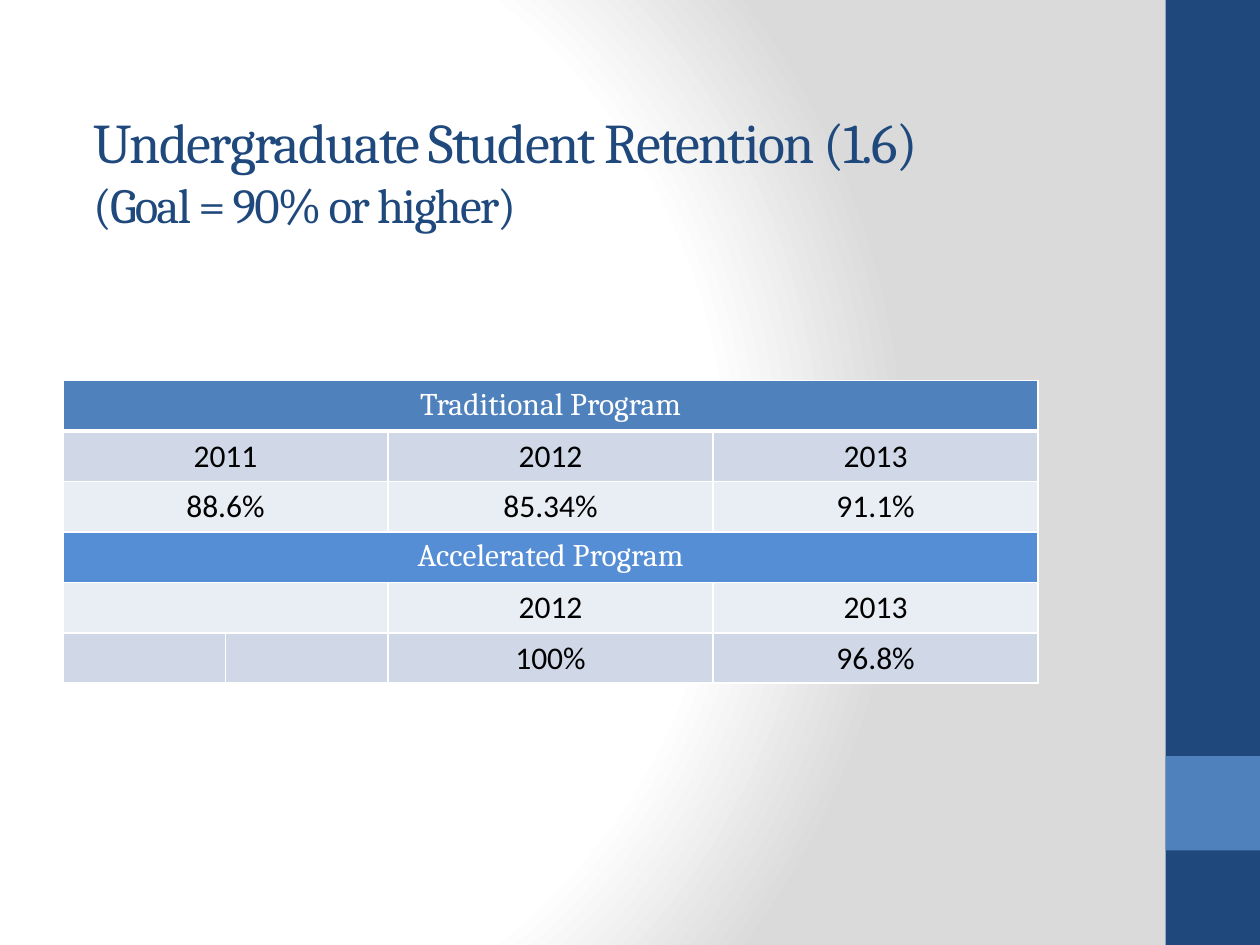
from lxml import etree
from pptx import Presentation
from pptx.dml.color import RGBColor
from pptx.enum.shapes import MSO_SHAPE as Shape
from pptx.enum.text import MSO_ANCHOR as Anchor, PP_ALIGN as Align
from pptx.oxml import parse_xml
from pptx.oxml.ns import nsdecls, qn
from pptx.util import Inches, Pt

COLORS = {
    "white": "FFFFFF",
    "black": "000000",
    "gray": "DADADA",
    "navy": "1F497D",
    "blue": "4F81BD",
    "bright": "558ED5",
    "band": "D0D8E8",
    "pale": "E9EDF4",
}
COLUMN_WIDTHS = [1.29, 1.29, 2.58, 2.58]
ROW_HEIGHT = 0.4
ROWS = [
    ("blue", ["Traditional Program"]),
    ("band", ["2011", "", "2012", "2013"]),
    ("pale", ["88.6%", "", "85.34%", "91.1%"]),
    ("bright", ["Accelerated Program"]),
    ("pale", ["", "", "2012", "2013"]),
    ("band", ["", "", "100%", "96.8%"]),
]


def color(name):
    return RGBColor.from_string(COLORS[name])


def set_background(page):
    fill = page.background.fill
    fill.solid()
    stops = "".join(
        f'<a:gs pos="{place * 1000}"><a:srgbClr val="{COLORS[name]}"/></a:gs>'
        for place, name in [(0, "white"), (75, "white"), (100, "gray")]
    )
    gradient = parse_xml(
        f'<a:gradFill {nsdecls("a")} rotWithShape="1"><a:gsLst>{stops}</a:gsLst>'
        '<a:path path="circle"><a:fillToRect l="20000" t="50000" r="100000" b="50000"/>'
        "</a:path></a:gradFill>"
    )
    solid = page.background._cSld.find(".//" + qn("a:solidFill"))
    solid.getparent().replace(solid, gradient)


def add_bar(page, top, height, name):
    bar = page.shapes.add_shape(
        Shape.RECTANGLE, Inches(9.25), Inches(top), Inches(0.75), Inches(height)
    )
    bar.shadow.inherit = False
    bar.fill.solid()
    bar.fill.fore_color.rgb = color(name)
    bar.line.fill.background()


def set_font(para, name, size, shade):
    para.font.name = name
    para.font.size = Pt(size)
    para.font.color.rgb = color(shade)


def add_title(page, lines):
    box = page.shapes.add_textbox(Inches(0.5), Inches(0.3), Inches(8.33), Inches(1.87))
    frame = box.text_frame
    frame.word_wrap = True
    frame.vertical_anchor = Anchor.MIDDLE
    frame.margin_left = Inches(0.24)
    frame.margin_top, frame.margin_bottom = Inches(0.23), 0
    frame.text = "\n".join(text for text, size in lines)
    for para, (text, size) in zip(frame.paragraphs, lines):
        set_font(para, "Cambria", size, "navy")
        para.runs[0].font._element.set("spc", "-100")


def set_borders(cell, top, bottom):
    props = cell._tc.get_or_add_tcPr()
    for side, width in [("L", 1), ("R", 1), ("T", top), ("B", bottom)]:
        line = etree.SubElement(props, qn(f"a:ln{side}"), w=str(Pt(width)))
        fill = etree.SubElement(line, qn("a:solidFill"))
        etree.SubElement(fill, qn("a:srgbClr"), val=COLORS["white"])


def fill_row(table, row, shade, texts):
    is_heading = len(texts) == 1
    texts = texts + [""] * (len(COLUMN_WIDTHS) - len(texts))
    for column, text in enumerate(texts):
        cell = table.cell(row, column)
        set_borders(cell, 3 if row == 1 else 1, 3 if row == 0 else 1)
        cell.fill.solid()
        cell.fill.fore_color.rgb = color(shade)
        cell.text = text
        para = cell.text_frame.paragraphs[0]
        para.alignment = Align.CENTER
        if is_heading:
            set_font(para, "Cambria", 18, "white")
        else:
            set_font(para, "Calibri", 18, "black")
    if is_heading:
        table.cell(row, 0).merge(table.cell(row, len(COLUMN_WIDTHS) - 1))
    elif row < len(ROWS) - 1:
        table.cell(row, 0).merge(table.cell(row, 1))


def add_retention_table(page):
    table = page.shapes.add_table(
        len(ROWS), len(COLUMN_WIDTHS), Inches(0.5), Inches(3.02),
        Inches(sum(COLUMN_WIDTHS)), Inches(ROW_HEIGHT * len(ROWS)),
    ).table
    for column, width in zip(table.columns, COLUMN_WIDTHS):
        column.width = Inches(width)
    for row, (shade, texts) in enumerate(ROWS):
        table.rows[row].height = Inches(ROW_HEIGHT)
        fill_row(table, row, shade, texts)


def main():
    deck = Presentation()
    deck.slide_width, deck.slide_height = Inches(10), Inches(7.5)
    page = deck.slides.add_slide(deck.slide_layouts[6])
    set_background(page)
    add_bar(page, 0, 7.5, "navy")
    add_bar(page, 6, 0.75, "blue")
    add_title(page, [
        ("Undergraduate Student Retention (1.6)", 32),
        ("(Goal = 90% or higher)", 28),
    ])
    add_retention_table(page)
    deck.save("out.pptx")


if __name__ == "__main__":
    main()
